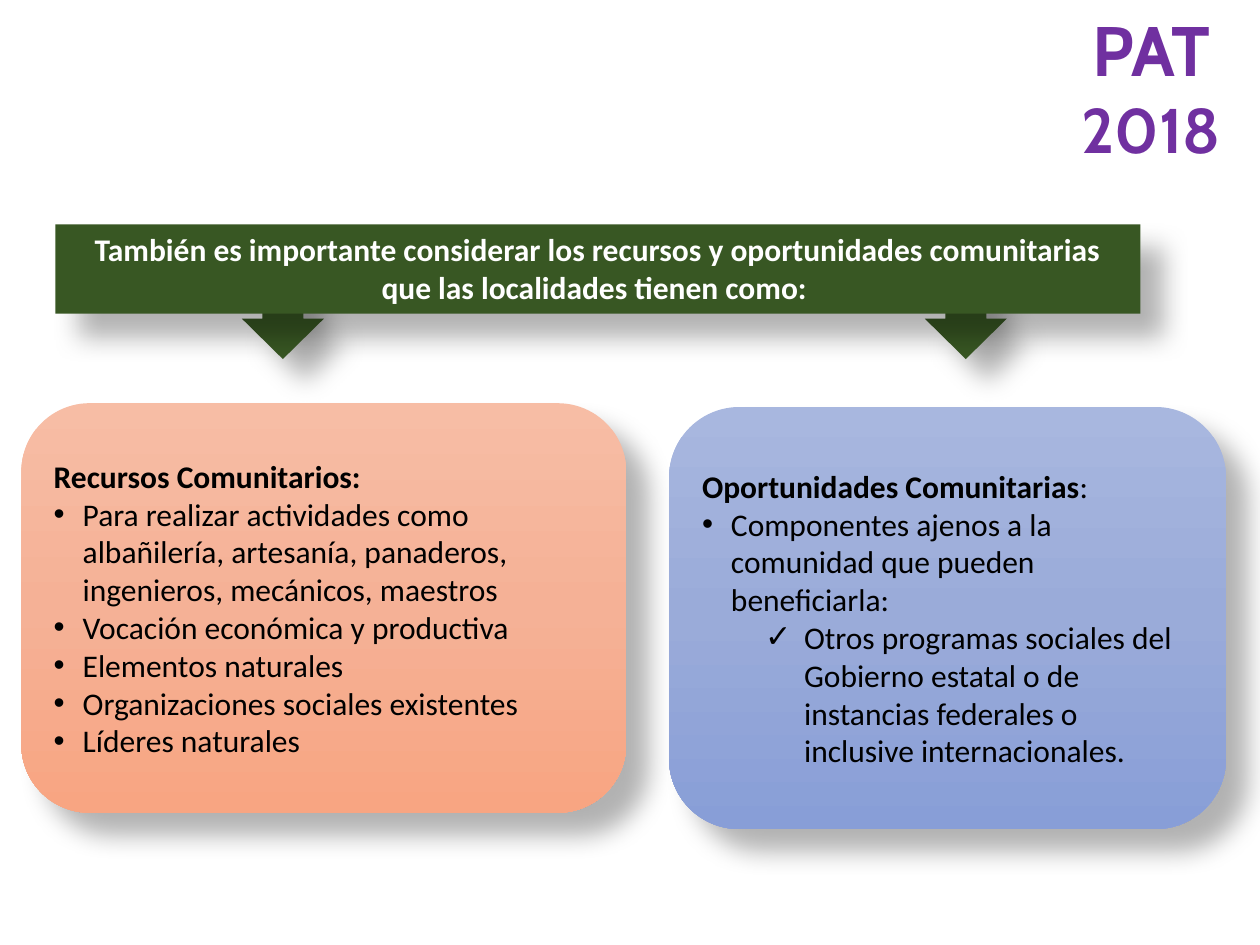
from pptx import Presentation
from pptx.dml.color import RGBColor
from pptx.enum.shapes import MSO_SHAPE
from pptx.enum.text import MSO_ANCHOR, PP_ALIGN
from pptx.oxml.ns import qn
from pptx.util import Inches, Pt
from lxml import etree

RECT, ROUND, DOWN = MSO_SHAPE.RECTANGLE, MSO_SHAPE.ROUNDED_RECTANGLE, MSO_SHAPE.DOWN_ARROW
LEFT, CENTER = PP_ALIGN.LEFT, PP_ALIGN.CENTER
TOP, MIDDLE = MSO_ANCHOR.TOP, MSO_ANCHOR.MIDDLE

# Grid of square cells
COLS, ROWS = 100, 75
CELL = Inches(0.1)

GREEN, PURPLE, WHITE, BLACK = "385723", "7030A0", "FFFFFF", "000000"
PEACH = ["F7BDA5", "F5B196", "F8A582"]
BLUE = ["A8B7DF", "9AABD9", "889ED7"]

# Text formats
BODY = {"name": "Calibri", "size": Pt(18), "bold": False}
HEAD = {**BODY, "bold": True}
LOGO = {"name": "Cabin", "size": Pt(40), "bold": True}
YEAR = {**LOGO, "size": Pt(36)}

# Bullet: sign, left margin, hanging indent, level
DOT = ("•", 0.23, 0.23, 0)
TICK = ("✓", 0.81, 0.31, 1)


def paint(code):
    return RGBColor.from_string(code)


def node(parent, tag, **attrs):
    return etree.SubElement(parent, qn(tag), {k: str(v) for k, v in attrs.items()})


class Page:
    def __init__(self, deck):
        self.shapes = deck.slides.add_slide(deck.slide_layouts[6]).shapes

    def place(self, *box):
        return [round(v * CELL) for v in box]

    def shape(self, kind, box, fill):
        item = self.shapes.add_shape(kind, *self.place(*box))
        item.line.fill.background()
        if isinstance(fill, str):
            item.fill.solid()
            item.fill.fore_color.rgb = paint(fill)
        else:
            self.blend(item, fill)
        self.shade(item)
        return item

    def blend(self, item, tones):
        item.fill.gradient()
        item.fill.gradient_angle = 270
        stops = item._element.spPr.find(qn("a:gradFill")).find(qn("a:gsLst"))
        for stop in list(stops):
            stops.remove(stop)
        step = 100000 // (len(tones) - 1)
        for i, tone in enumerate(tones):
            node(node(stops, "a:gs", pos=i * step), "a:srgbClr", val=tone)

    def shade(self, item):
        item.shadow.inherit = False
        effect = item._element.spPr.find(qn("a:effectLst"))
        cast = node(effect, "a:outerShdw", blurRad=Pt(15), dist=Pt(18),
                    dir=45 * 60000, algn="tl", rotWithShape=0)
        node(node(cast, "a:srgbClr", val=BLACK), "a:alpha", val=30000)

    def text(self, item, lines, color, align=LEFT, anchor=TOP):
        frame = item.text_frame
        for key, value in {"word_wrap": True, "vertical_anchor": anchor}.items():
            setattr(frame, key, value)
        for i, (bullet, runs) in enumerate(lines):
            para = frame.add_paragraph() if i else frame.paragraphs[0]
            para.alignment = align
            if bullet:
                self.bullet(para, *bullet)
            for words, style in runs:
                run = para.add_run()
                run.text = words
                run.font.color.rgb = paint(color)
                for key, value in style.items():
                    setattr(run.font, key, value)

    def bullet(self, para, sign, margin, hang, level):
        para.level = level
        props = para._p.get_or_add_pPr()
        props.set("marL", str(Inches(margin)))
        props.set("indent", str(-Inches(hang)))
        node(props, "a:buFont", typeface="Arial")
        node(props, "a:buChar", char=sign)

    def label(self, box, lines, color):
        self.text(self.shapes.add_textbox(*self.place(*box)), lines, color, CENTER)

    def card(self, box, tones, lines):
        self.text(self.shape(ROUND, box, tones), lines, BLACK, anchor=MIDDLE)

    def arrow(self, col):
        self.shape(DOWN, (col, 22.1, 6.5, 6.4), GREEN)

    def banner(self, box, words):
        self.text(self.shape(RECT, box, GREEN), [(None, [(words, HEAD)])], WHITE, CENTER)


def main():
    deck = Presentation()
    deck.slide_width, deck.slide_height = COLS * CELL, ROWS * CELL
    page = Page(deck)

    # Corner title
    page.label((82.7, 0, 17.3, 13.8), [(None, [("PAT", LOGO), (" 2018", YEAR)])], PURPLE)

    # Arrows, half hidden by the banner
    for col in (73.4, 19.2):
        page.arrow(col)

    # Community resources
    means = [
        "Para realizar actividades como albañilería, artesanía, panaderos, "
        "ingenieros, mecánicos, maestros",
        "Vocación económica y productiva",
        "Elementos naturales",
        "Organizaciones sociales existentes",
        "Líderes naturales",
    ]
    page.card((1.7, 32, 48, 32.5), PEACH,
              [(None, [("Recursos Comunitarios:", HEAD)])]
              + [(DOT, [(words, BODY)]) for words in means])

    # Community opportunities
    page.card((53.1, 32.3, 44.2, 33.5), BLUE, [
        (None, [("Oportunidades Comunitarias", HEAD), (":", BODY)]),
        (DOT, [("Componentes ajenos a la comunidad que pueden beneficiarla:", BODY)]),
        (TICK, [("Otros programas sociales del Gobierno estatal o de instancias "
                 "federales o inclusive internacionales.", BODY)]),
    ])

    # Banner
    page.banner((4.4, 17.8, 86.1, 7.1),
                "También es importante considerar los recursos y oportunidades "
                "comunitarias que las localidades tienen como: ")

    deck.save("out.pptx")


if __name__ == "__main__":
    main()
